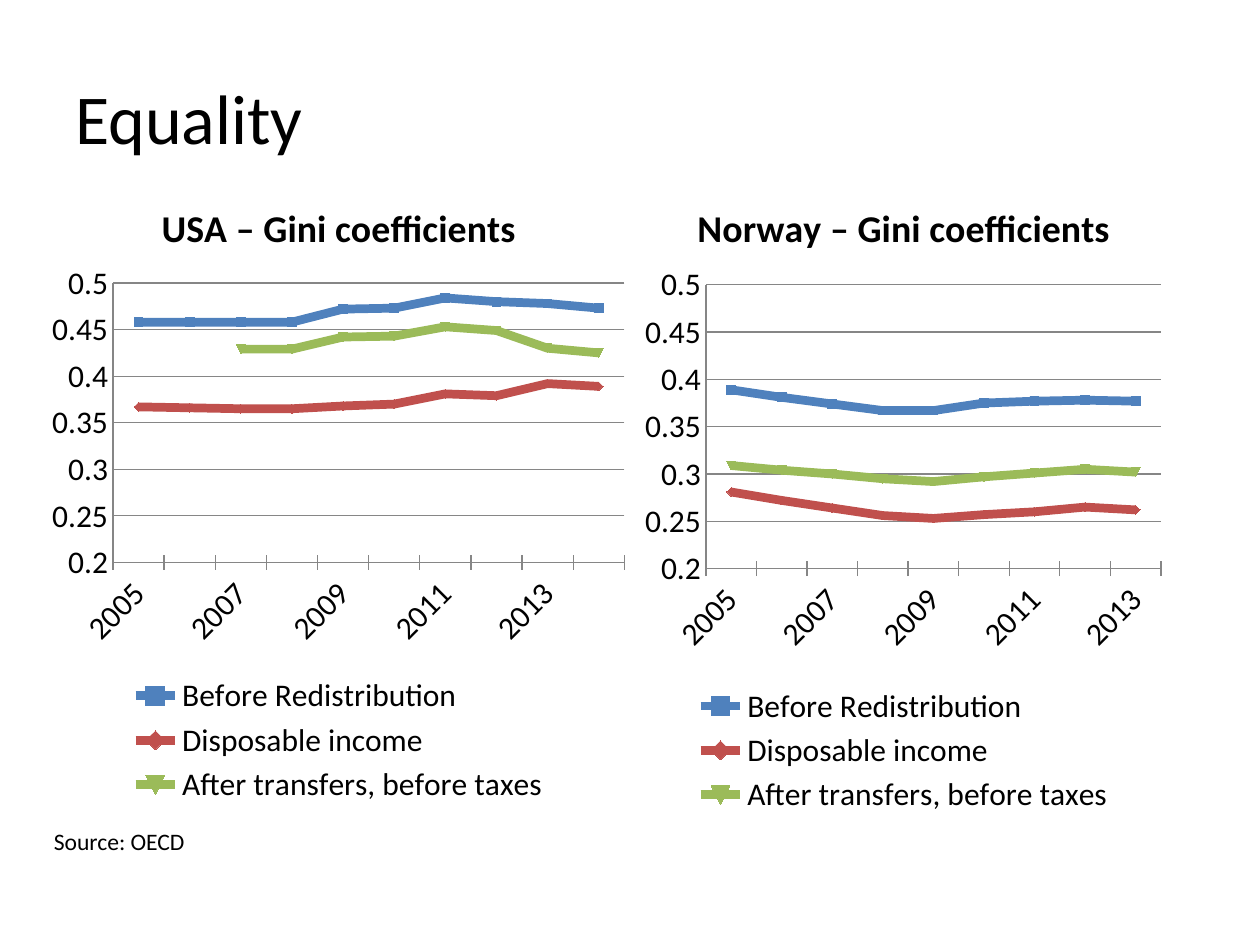
from lxml import etree
from pptx import Presentation
from pptx.chart.data import CategoryChartData
from pptx.dml.color import RGBColor
from pptx.enum.chart import XL_CHART_TYPE, XL_LEGEND_POSITION, XL_TICK_MARK
from pptx.enum.text import MSO_ANCHOR
from pptx.oxml.ns import qn
from pptx.util import Inches, Pt

LINE_MARKERS = XL_CHART_TYPE.LINE_MARKERS
LEGEND_BOTTOM = XL_LEGEND_POSITION.BOTTOM
TICK_CROSS = XL_TICK_MARK.CROSS
TICK_NONE = XL_TICK_MARK.NONE
MIDDLE = MSO_ANCHOR.MIDDLE
TOP = MSO_ANCHOR.TOP

FONT = "Calibri"
COLORS = {
    "text": "000000",
    "axis": "868686",
    "Before Redistribution": "4F81BD",
    "Disposable income": "C0504D",
    "After transfers, before taxes": "9BBB59",
}
SERIES_NAMES = ["Before Redistribution", "Disposable income", "After transfers, before taxes"]
USA_GINI = [
    [0.458, 0.458, 0.458, 0.458, 0.472, 0.473, 0.484, 0.48, 0.478, 0.473],
    [0.367, 0.366, 0.365, 0.365, 0.368, 0.37, 0.381, 0.379, 0.392, 0.389],
    [None, None, 0.429, 0.429, 0.442, 0.443, 0.453, 0.449, 0.43, 0.425],
]
NORWAY_GINI = [
    [0.389, 0.381, 0.374, 0.367, 0.367, 0.375, 0.377, 0.378, 0.377],
    [0.281, 0.272, 0.264, 0.256, 0.253, 0.257, 0.26, 0.265, 0.262],
    [0.309, 0.304, 0.3, 0.295, 0.292, 0.297, 0.301, 0.305, 0.302],
]


def style_font(font, size, bold=False):
    """Apply the deck's typeface and text colour at a given size."""
    font.name = FONT
    font.size = Pt(size)
    font.bold = bold
    font.color.rgb = RGBColor.from_string(COLORS["text"])


def style_line(line, color, width):
    """Colour a line and set its width in points."""
    line.color.rgb = RGBColor.from_string(COLORS[color])
    line.width = Pt(width)


def add_text(slide, text, *, left, top, width, height, size, anchor=TOP):
    """Add a wrapped text box with a single paragraph."""
    box = slide.shapes.add_textbox(Inches(left), Inches(top), Inches(width), Inches(height))
    frame = box.text_frame
    frame.word_wrap = True
    frame.vertical_anchor = anchor
    span = frame.paragraphs[0].add_run()
    span.text = text
    style_font(span.font, size)


def place_plot(chart, plot_box):
    """Fix the inner plot area as fractions of the chart's size."""
    area = chart.element.find(".//" + qn("c:plotArea"))
    for old in area.findall(qn("c:layout")):
        area.remove(old)
    layout = etree.Element(qn("c:layout"))
    manual = etree.SubElement(layout, qn("c:manualLayout"))
    settings = [("layoutTarget", "inner"), ("xMode", "edge"), ("yMode", "edge")]
    settings += zip("xywh", plot_box)
    for name, value in settings:
        etree.SubElement(manual, qn("c:" + name)).set("val", str(value))
    area.insert(0, layout)


def style_axes(chart):
    """Format the year axis and the coefficient axis."""
    years, values = chart.category_axis, chart.value_axis
    for axis, tick in ((years, TICK_CROSS), (values, TICK_NONE)):
        axis.major_tick_mark = tick
        axis.minor_tick_mark = TICK_NONE
        style_font(axis.tick_labels.font, 18)
        style_line(axis.format.line, "axis", 0.75)
    body = years.tick_labels.font and chart.element.find(".//" + qn("c:catAx")).find(".//" + qn("a:bodyPr"))
    body.set("rot", "-2700000")
    values.minimum_scale, values.maximum_scale, values.major_unit = 0.2, 0.5, 0.05
    values.has_major_gridlines = True
    style_line(values.major_gridlines.format.line, "axis", 0.75)


def add_gini_chart(slide, title, rows, *, left, top, width, height, plot_box):
    """Add a line chart of yearly Gini coefficients starting in 2005."""
    data = CategoryChartData()
    data.categories = [str(2005 + index) for index in range(len(rows[0]))]
    for name, row in zip(SERIES_NAMES, rows):
        data.add_series(name, row)
    chart = slide.shapes.add_chart(
        LINE_MARKERS, Inches(left), Inches(top), Inches(width), Inches(height), data
    ).chart
    style_font(chart.font, 18)
    chart.has_title = True
    span = chart.chart_title.text_frame.paragraphs[0].add_run()
    span.text = title
    style_font(span.font, 21.6, bold=True)
    chart.has_legend = True
    chart.legend.position = LEGEND_BOTTOM
    chart.legend.include_in_layout = False
    style_font(chart.legend.font, 18)
    style_axes(chart)
    chart.plots[0].vary_by_categories = False
    for series in chart.plots[0].series:
        series.smooth = False
        style_line(series.format.line, series.name, 5)
    place_plot(chart, plot_box)


def main():
    """Build and save the equality slide."""
    deck = Presentation()
    deck.slide_width, deck.slide_height = Inches(10), Inches(7.5)
    page = deck.slides.add_slide(deck.slide_layouts[6])
    add_text(page, "Equality", left=0.5, top=0.3, width=9, height=1.25, size=40, anchor=MIDDLE)
    add_gini_chart(page, "USA – Gini coefficients", USA_GINI, left=0.33, top=1.39,
                   width=4.72, height=5.04, plot_box=(0.12, 0.17, 0.86, 0.44))
    add_gini_chart(page, "Norway – Gini coefficients", NORWAY_GINI, left=5.05, top=1.39,
                   width=4.25, height=5.12, plot_box=(0.13, 0.17, 0.85, 0.44))
    add_text(page, "Source: OECD", left=0.33, top=6.51, width=3.62, height=0.33, size=13.5)
    deck.save("out.pptx")


if __name__ == "__main__":
    main()
